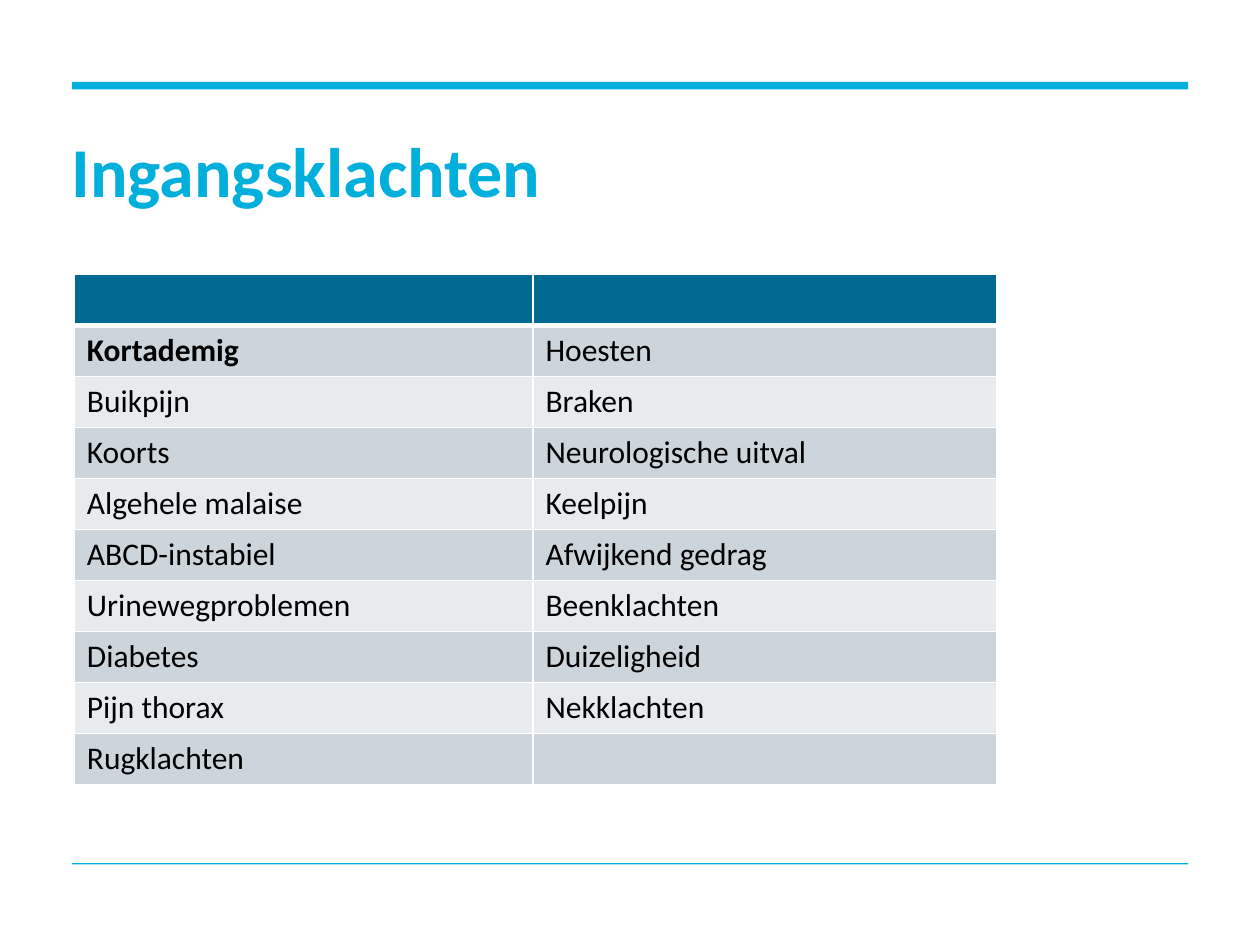
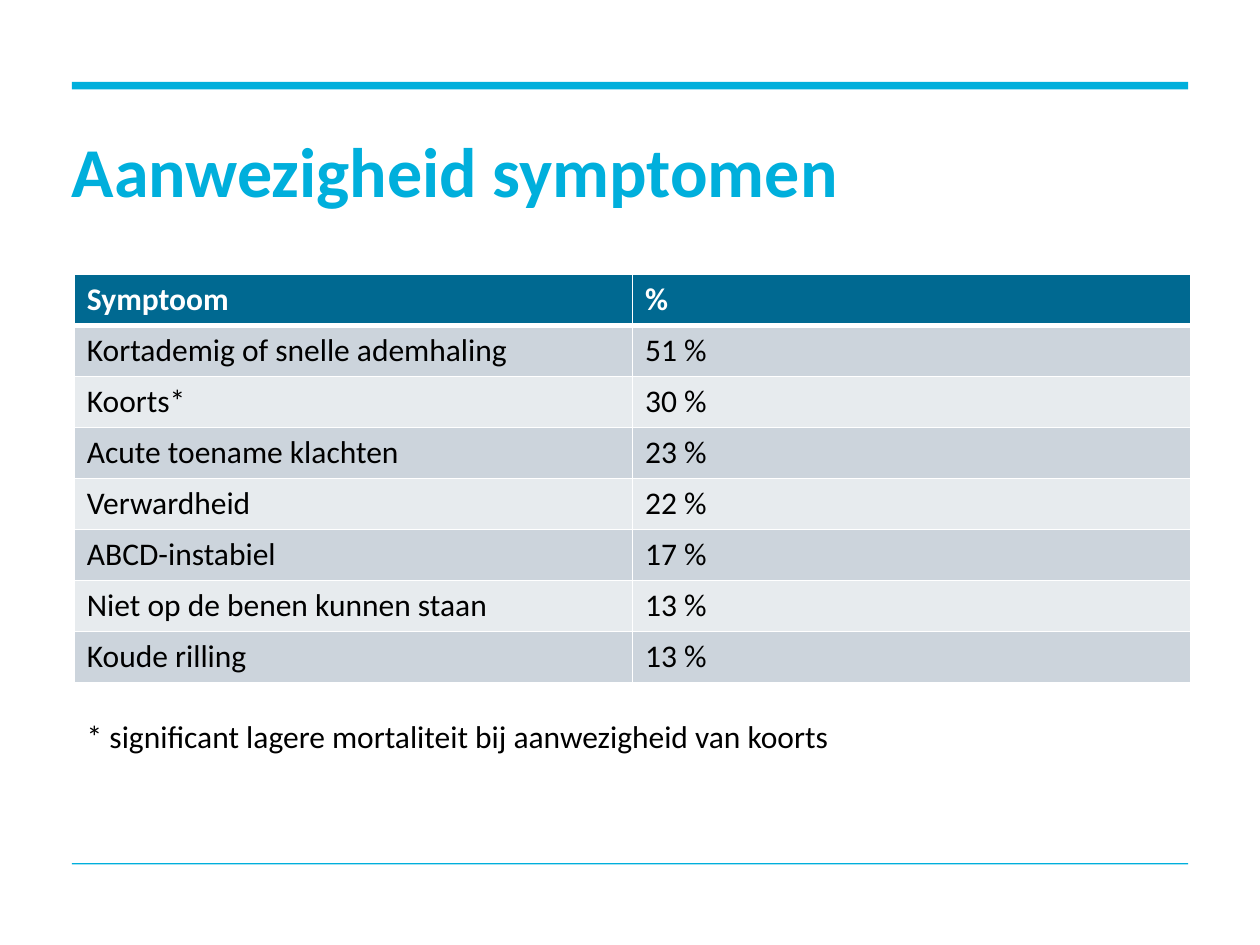
from lxml import etree
from pptx import Presentation
from pptx.dml.color import RGBColor
from pptx.enum.shapes import MSO_SHAPE
from pptx.enum.text import MSO_ANCHOR
from pptx.oxml.ns import qn
from pptx.util import Inches, Pt

RECTANGLE = MSO_SHAPE.RECTANGLE
MIDDLE = MSO_ANCHOR.MIDDLE

COLORS = {
    "accent": "00AFDC",
    "header": "006991",
    "band_dark": "CCD4DC",
    "band_light": "E7EBEE",
    "text": "000000",
    "white": "FFFFFF",
}
TITLE = {"name": "Calibri", "size": Pt(40), "bold": True}
BODY = {"name": "Calibri", "size": Pt(18), "bold": False}
STRONG = {**BODY, "bold": True}
NO_INSETS = dict.fromkeys(
    ("margin_left", "margin_top", "margin_right", "margin_bottom"), 0
)

LEFT, WIDTH = 0.57, 8.86
TABLE_LEFT, TABLE_TOP, ROW_HEIGHT = 0.59, 2.18, 4.05 / 10

COMPLAINTS = [
    ("", ""),
    ("Kortademig", "Hoesten"),
    ("Buikpijn", "Braken"),
    ("Koorts", "Neurologische uitval"),
    ("Algehele malaise", "Keelpijn"),
    ("ABCD-instabiel", "Afwijkend gedrag"),
    ("Urinewegproblemen", "Beenklachten"),
    ("Diabetes", "Duizeligheid"),
    ("Pijn thorax", "Nekklachten"),
    ("Rugklachten", ""),
]
SYMPTOMS = [
    ("Symptoom", "%"),
    ("Kortademig of snelle ademhaling", "51 %"),
    ("Koorts*", "30 %"),
    ("Acute toename klachten", "23 %"),
    ("Verwardheid", "22 %"),
    ("ABCD-instabiel", "17 %"),
    ("Niet op de benen kunnen staan", "13 %"),
    ("Koude rilling", "13 %"),
]


def rgb(color):
    """Return the named colour as an RGBColor."""
    return RGBColor.from_string(COLORS[color])


def set_attributes(target, values):
    """Set each format value on the target."""
    for name, value in values.items():
        setattr(target, name, value)


def add_run(p, text, style, color):
    """Add a formatted run to a paragraph."""
    r = p.add_run()
    r.text = text
    set_attributes(r.font, style)
    r.font.color.rgb = rgb(color)


def add_rule(s, top, height):
    """Draw a horizontal accent bar across the content width."""
    sp = s.shapes.add_shape(
        RECTANGLE, Inches(LEFT), Inches(top), Inches(WIDTH), Inches(height)
    )
    sp.shadow.inherit = False
    sp.fill.solid()
    sp.fill.fore_color.rgb = rgb("accent")
    sp.line.fill.background()


def add_text(s, box, text, style, color, frame=None, paragraph=None):
    """Add a wrapping text box with one paragraph."""
    tf = s.shapes.add_textbox(*map(Inches, box)).text_frame
    set_attributes(tf, {"word_wrap": True, **(frame or {})})
    p = tf.paragraphs[0]
    set_attributes(p, paragraph or {})
    add_run(p, text, style, color)


def add_content_slide(prs, title):
    """Add a blank slide with the shared rules and title."""
    s = prs.slides.add_slide(prs.slide_layouts[6])
    add_rule(s, 0.65, 0.06)
    add_rule(s, 6.85, 0.01)
    add_text(
        s, (LEFT, 1.1, WIDTH, 0.58), title, TITLE, "accent",
        {"vertical_anchor": MIDDLE, **NO_INSETS}, {"line_spacing": Pt(42)},
    )
    return s


def set_borders(cell, top, bottom):
    """Give a cell white borders, with top and bottom widths in points."""
    tc_pr = cell._tc.get_or_add_tcPr()
    for side, width in (("L", 1), ("R", 1), ("T", top), ("B", bottom)):
        ln = etree.SubElement(tc_pr, qn(f"a:ln{side}"), w=str(Pt(width)))
        fill = etree.SubElement(ln, qn("a:solidFill"))
        etree.SubElement(fill, qn("a:srgbClr"), val=COLORS["white"])


def add_banded_table(s, rows, widths, strong=()):
    """Add a table with a dark header row and alternating bands."""
    table = s.shapes.add_table(
        len(rows), len(widths), Inches(TABLE_LEFT), Inches(TABLE_TOP),
        Inches(sum(widths)), Inches(ROW_HEIGHT * len(rows)),
    ).table
    for column, width in zip(table.columns, widths):
        column.width = Inches(width)
    for i, row in enumerate(rows):
        band = "band_dark" if i % 2 else "band_light"
        fill, color = ("text", "white") if i == 0 else (band, "text")
        fill = "header" if i == 0 else fill
        for j, text in enumerate(row):
            cell = table.cell(i, j)
            set_borders(cell, 3 if i == 1 else 1, 3 if i == 0 else 1)
            cell.fill.solid()
            cell.fill.fore_color.rgb = rgb(fill)
            if text:
                style = STRONG if i == 0 or text in strong else BODY
                add_run(cell.text_frame.paragraphs[0], text, style, color)


def main():
    """Build the two slides and save them."""
    prs = Presentation()
    prs.slide_width, prs.slide_height = Inches(10), Inches(7.5)

    s = add_content_slide(prs, "Ingangsklachten")
    add_banded_table(s, COMPLAINTS, (3.64, 3.68), strong=("Kortademig",))

    s = add_content_slide(prs, "Aanwezigheid symptomen")
    add_banded_table(s, SYMPTOMS, (4.43, 4.43))
    add_text(
        s, (TABLE_LEFT, 5.64, 7.8, 0.71),
        "* significant lagere mortaliteit bij aanwezigheid van koorts",
        BODY, "text",
    )

    prs.save("out.pptx")


if __name__ == "__main__":
    main()
